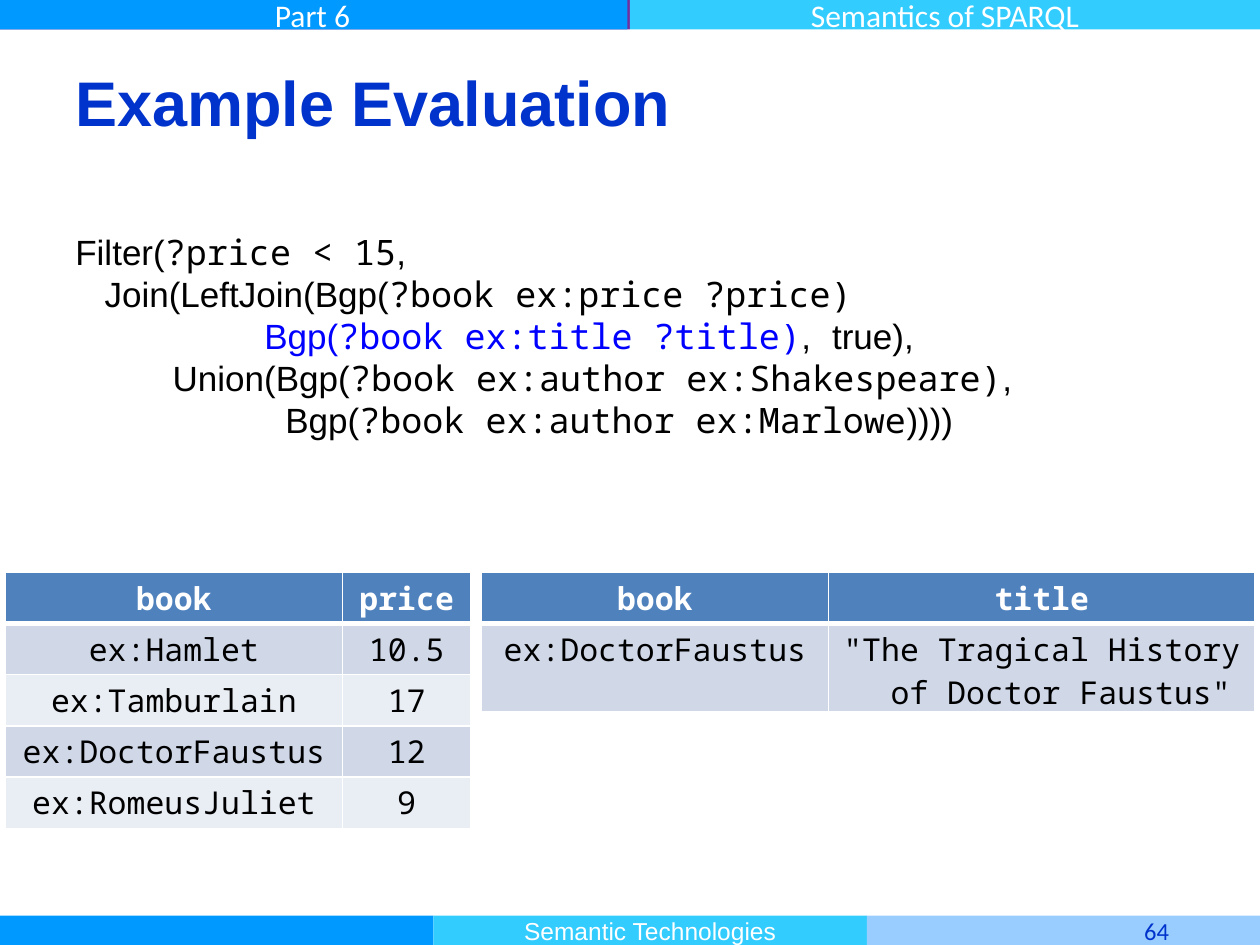
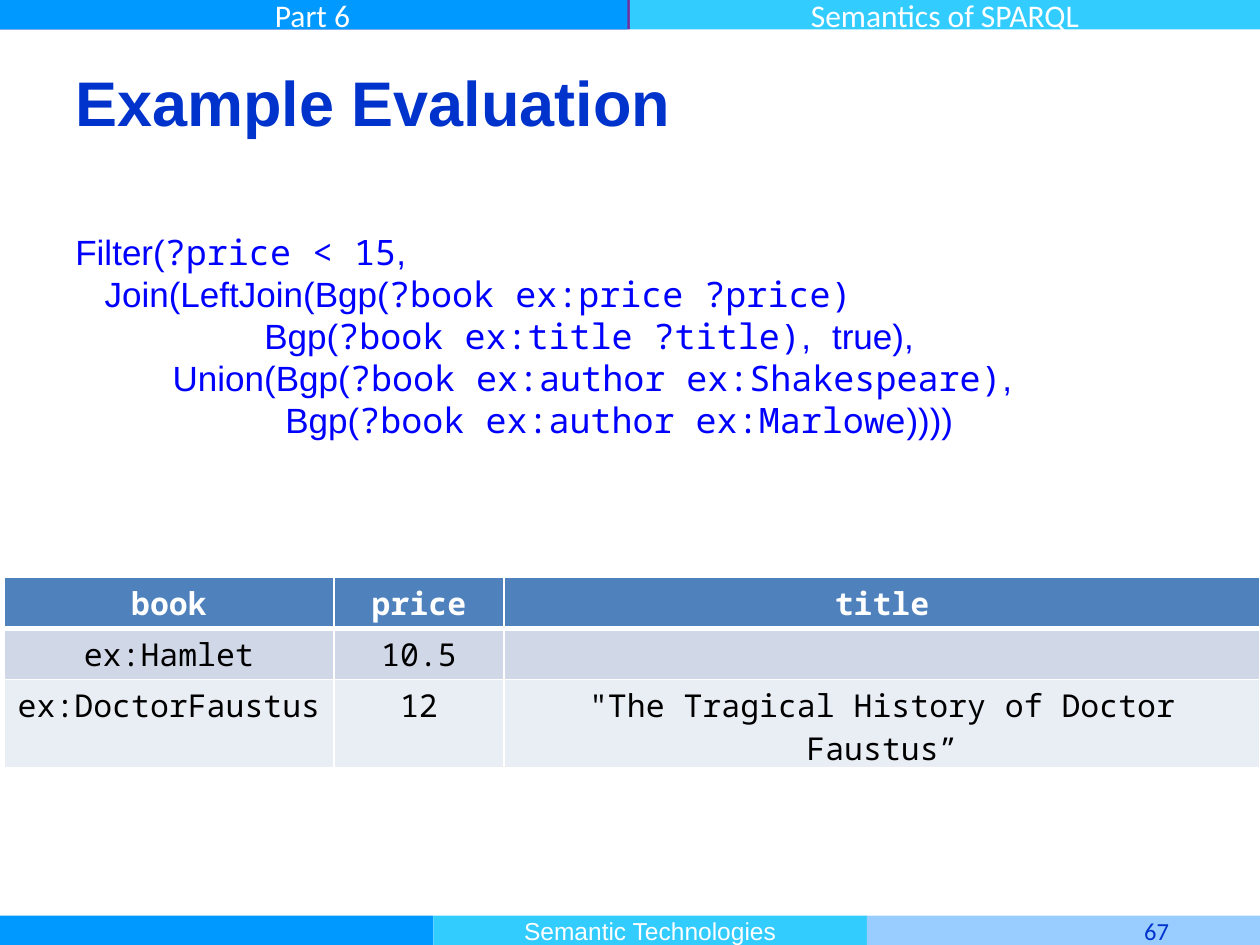
import dataclasses

import lxml.etree
import pptx
import pptx.dml.color
import pptx.enum.shapes
import pptx.enum.text
import pptx.oxml.ns
import pptx.util

Pt = pptx.util.Pt
ALIGN = pptx.enum.text.PP_ALIGN
MIDDLE = pptx.enum.text.MSO_ANCHOR.MIDDLE


@dataclasses.dataclass(frozen=True)
class Theme:
    sans: str = "Arial"
    band_font: str = "Calibri"
    mono: str = "Noto Sans Mono"
    white: str = "FFFFFF"
    black: str = "000000"
    title: str = "0033CC"
    active: str = "0000FF"
    blue: str = "0099FF"
    cyan: str = "33CCFF"
    pale: str = "99CCFF"
    purple: str = "7030A0"
    table_head: str = "4F81BD"
    table_rows: tuple = ("D0D8E8", "E9EDF4")
    title_size: int = 36
    code_size: int = 20
    code_pitch: int = 24
    text_size: int = 18
    footer_size: int = 14


THEME = Theme()
PAGE_WIDTH, PAGE_HEIGHT = 720, 540
BAND_HEIGHT = 16.8
FOOTER_TOP = PAGE_HEIGHT - BAND_HEIGHT
FOOTER_WIDTH = 247.7
ROW_HEIGHT = 29.3

QUERY = [
    (0, [("Filter(", "sans"), ("?price < 15", "mono"), (",", "sans")]),
    (16.7, [("Join(LeftJoin(Bgp(", "sans"), ("?book ex:price ?price)", "mono")]),
    (108, [("Bgp(", "sans"), ("?book ex:title ?title)", "mono"),
           (",", "sans"), (" ", "mono"), ("true),", "sans")]),
    (55.6, [("Union(Bgp(", "sans"), ("?book ex:author ex:Shakespeare)", "mono"),
            (",", "sans")]),
    (120, [("Bgp(", "sans"), ("?book ex:author ex:Marlowe", "mono"),
           ("))))", "sans")]),
]
EVERY_SPAN = {(line, part) for line, (_, parts) in enumerate(QUERY)
              for part in range(len(parts))}
TITLE_PATTERN = {(2, 0), (2, 1)}


def rgb(color):
    return pptx.dml.color.RGBColor.from_string(color)


def add_span(para, text, font, size, color, bold=False):
    span = para.add_run()
    span.text = text
    span.font.name = font
    span.font.size = Pt(size)
    span.font.bold = bold
    span.font.color.rgb = rgb(color)


def set_indent(para, indent):
    para._p.get_or_add_pPr().set("marL", str(Pt(indent)))


def add_band(page, left, top, width, fill):
    band = page.shapes.add_shape(
        pptx.enum.shapes.MSO_SHAPE.RECTANGLE,
        Pt(left), Pt(top), Pt(width), Pt(BAND_HEIGHT))
    band.shadow.inherit = False
    band.fill.solid()
    band.fill.fore_color.rgb = rgb(fill)
    band.line.fill.background()
    return band


def label_band(band, text, font, size, color, align=ALIGN.CENTER):
    frame = band.text_frame
    frame.vertical_anchor = MIDDLE
    para = frame.paragraphs[0]
    para.alignment = align
    add_span(para, text, font, size, color)


def add_bands(page, number):
    half = PAGE_WIDTH / 2
    add_band(page, 0, 0, half, THEME.purple)
    for left, fill, text in ((-1.4, THEME.blue, "Part 6"),
                             (half, THEME.cyan, "Semantics of SPARQL")):
        band = add_band(page, left, 0, half, fill)
        label_band(band, text, THEME.band_font, THEME.text_size, THEME.white)

    add_band(page, 0, FOOTER_TOP, FOOTER_WIDTH, THEME.blue)
    course = add_band(page, FOOTER_WIDTH, FOOTER_TOP, FOOTER_WIDTH, THEME.cyan)
    label_band(course, "Semantic Technologies", THEME.sans,
               THEME.footer_size, THEME.white)
    number_left = 2 * FOOTER_WIDTH
    number_band = add_band(page, number_left, FOOTER_TOP,
                           PAGE_WIDTH - number_left, THEME.pale)
    number_band.text_frame.margin_right = Pt(52)
    label_band(number_band, str(number), THEME.band_font,
               THEME.footer_size, THEME.title, ALIGN.RIGHT)


def add_text_frame(page, top, height):
    box = page.shapes.add_textbox(Pt(36), Pt(top), Pt(648), Pt(height))
    box.text_frame.word_wrap = True
    return box.text_frame


def add_title(page, text):
    frame = add_text_frame(page, 21.6, 72.7)
    frame.vertical_anchor = MIDDLE
    add_span(frame.paragraphs[0], text, THEME.sans, THEME.title_size,
             THEME.title, True)


def add_query(page, active_spans):
    frame = add_text_frame(page, 105.8, 402.5)
    frame.margin_top = Pt(26)
    for line, (indent, parts) in enumerate(QUERY):
        para = frame.add_paragraph() if line else frame.paragraphs[0]
        para.line_spacing = Pt(THEME.code_pitch)
        set_indent(para, indent)
        for part, (text, family) in enumerate(parts):
            active = (line, part) in active_spans
            add_span(para, text, getattr(THEME, family), THEME.code_size,
                     THEME.active if active else THEME.black)


def set_borders(cell, top, bottom):
    properties = cell._tc.get_or_add_tcPr()
    widths = {"a:lnL": 1, "a:lnR": 1, "a:lnT": top, "a:lnB": bottom}
    for place, (tag, width) in enumerate(widths.items()):
        line = lxml.etree.Element(pptx.oxml.ns.qn(tag), w=str(Pt(width)))
        fill = lxml.etree.SubElement(line, pptx.oxml.ns.qn("a:solidFill"))
        lxml.etree.SubElement(fill, pptx.oxml.ns.qn("a:srgbClr"), val=THEME.white)
        properties.insert(place, line)


def fill_cell(cell, text, row):
    head = row == 0
    cell.margin_top, cell.margin_bottom = Pt(2.5), Pt(0)
    cell.fill.solid()
    cell.fill.fore_color.rgb = rgb(
        THEME.table_head if head else THEME.table_rows[(row - 1) % 2])
    set_borders(cell, 3 if row == 1 else 1, 3 if head else 1)
    frame = cell.text_frame
    for index, line in enumerate(text.split("\n")):
        para = frame.add_paragraph() if index else frame.paragraphs[0]
        para.alignment = ALIGN.CENTER
        if index:
            set_indent(para, 21.6)
        if line:
            add_span(para, line, THEME.mono, THEME.text_size,
                     THEME.white if head else THEME.black, head)


def add_solutions(page, left, top, widths, rows):
    heights = [ROW_HEIGHT] * len(rows)
    if "Tragical" in rows[-1][-1]:
        heights[-1] = 50.4
    table = page.shapes.add_table(
        len(rows), len(widths), Pt(left), Pt(top),
        Pt(sum(widths)), Pt(sum(heights))).table
    for column, width in zip(table.columns, widths):
        column.width = Pt(width)
    for row, (height, texts) in enumerate(zip(heights, rows)):
        table.rows[row].height = Pt(height)
        for column, text in enumerate(texts):
            fill_cell(table.cell(row, column), text, row)


def add_page(deck, number, active_spans):
    page = deck.slides.add_slide(deck.slide_layouts[6])
    add_bands(page, number)
    add_title(page, "Example Evaluation")
    add_query(page, active_spans)
    return page


def main():
    deck = pptx.Presentation()
    deck.slide_width, deck.slide_height = Pt(PAGE_WIDTH), Pt(PAGE_HEIGHT)

    page = add_page(deck, 64, TITLE_PATTERN)
    add_solutions(page, 3, 326.9, (192.7, 73.4), [
        ("book", "price"),
        ("ex:Hamlet", "10.5"),
        ("ex:Tamburlain", "17"),
        ("ex:DoctorFaustus", "12"),
        ("ex:RomeusJuliet", "9"),
    ])
    add_solutions(page, 275, 326.9, (198.4, 243.8), [
        ("book", "title"),
        ("ex:DoctorFaustus", "\"The Tragical History\nof Doctor Faustus\""),
    ])

    page = add_page(deck, 67, EVERY_SPAN)
    add_solutions(page, 2.2, 329.8, (188.6, 97.2, 432), [
        ("book", "price", "title"),
        ("ex:Hamlet", "10.5", ""),
        ("ex:DoctorFaustus", "12", "\"The Tragical History of Doctor Faustus”"),
    ])

    deck.save("out.pptx")


if __name__ == "__main__":
    main()
